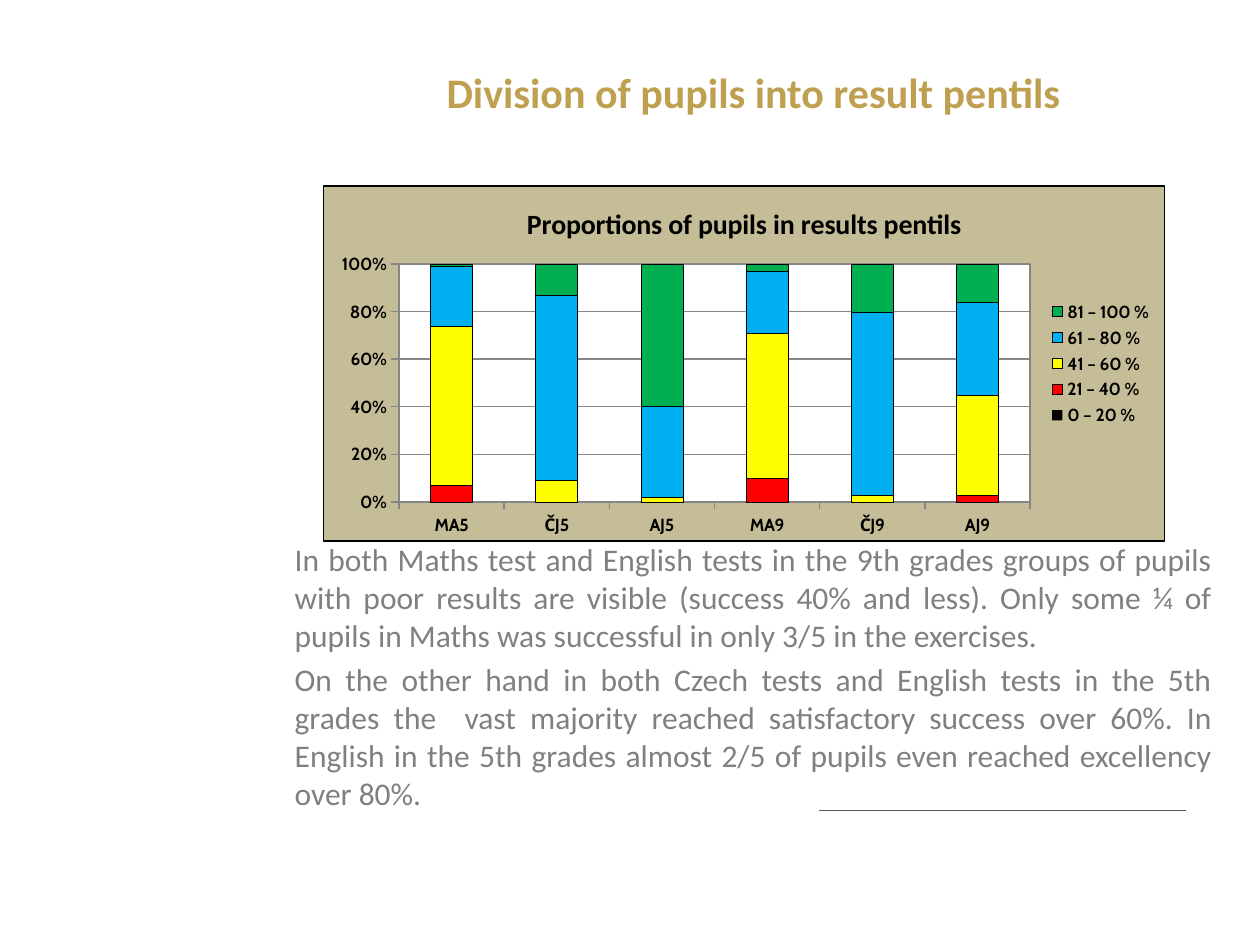
from lxml import etree
from pptx import Presentation
from pptx.chart.data import CategoryChartData
from pptx.dml.color import RGBColor
from pptx.enum.chart import XL_CHART_TYPE, XL_LEGEND_POSITION, XL_TICK_MARK
from pptx.enum.shapes import MSO_CONNECTOR
from pptx.enum.text import MSO_ANCHOR, PP_ALIGN
from pptx.oxml import parse_xml
from pptx.oxml.ns import nsdecls, qn
from pptx.util import Inches, Pt

STACKED = XL_CHART_TYPE.COLUMN_STACKED_100
RIGHT = XL_LEGEND_POSITION.RIGHT
OUTSIDE = XL_TICK_MARK.OUTSIDE
STRAIGHT = MSO_CONNECTOR.STRAIGHT
MIDDLE, TOP = MSO_ANCHOR.MIDDLE, MSO_ANCHOR.TOP
CENTER, JUSTIFY = PP_ALIGN.CENTER, PP_ALIGN.JUSTIFY

COLORS = {
    "gold": "BFA050", "gray": "808080", "rule": "58565B", "grid": "868686",
    "sand": "C4BD97", "white": "FFFFFF", "black": "000000", "red": "FF0000",
    "yellow": "FFFF00", "blue": "00B0F0", "green": "00B050",
}
TESTS = ["MA5", "ČJ5", "AJ5", "MA9", "ČJ9", "AJ9"]
BANDS = [
    ("0 – 20 %", "black", (0, 0, 0, 0, 0, 0)),
    ("21 – 40 %", "red", (7, 0, 0, 10, 0, 3)),
    ("41 – 60 %", "yellow", (67, 9, 2, 61, 3, 42)),
    ("61 – 80 %", "blue", (25, 78, 38, 26, 76, 39)),
    ("81 – 100 %", "green", (1, 13, 59, 3, 20, 16)),
]
NOTES = [
    "In both Maths test and English tests in the 9th grades groups of pupils "
    "with poor results are visible (success 40% and less). Only some ¼ of "
    "pupils in Maths was successful in only 3/5 in the exercises.",
    "On the other hand in both Czech tests and English tests in the 5th grades "
    "the  vast majority reached satisfactory success over 60%. In English in "
    "the 5th grades almost 2/5 of pupils even reached excellency over 80%.",
]


class Deck:
    def __init__(self, slide):
        self.slide = slide
        self.face = "Calibri"
        self.label = "Cabin"

    def color(self, name):
        return RGBColor.from_string(COLORS[name])

    def style(self, font, size, color, bold=False, face=None):
        font.size, font.bold, font.name = Pt(size), bold, face or self.face
        font.color.rgb = self.color(color)

    def stroke(self, line, color, width):
        line.color.rgb = self.color(color)
        line.width = Pt(width)

    def rule(self, left, right, top):
        line = self.slide.shapes.add_connector(
            STRAIGHT, Inches(left), Inches(top), Inches(right), Inches(top))
        self.stroke(line.line, "rule", 0.75)
        etree.SubElement(line._element.spPr, qn("a:effectLst"))

    def text(self, box, lines, size, color, align, anchor, bold=False):
        frame = self.slide.shapes.add_textbox(*map(Inches, box)).text_frame
        frame.word_wrap = True
        frame.vertical_anchor = anchor
        frame.text = "\n".join(lines)
        for i, para in enumerate(frame.paragraphs):
            para.alignment = align
            if i:
                para.space_before = Pt(size * 0.2)
            for run in para.runs:
                self.style(run.font, size, color, bold)

    def area(self, fill, edge):
        return parse_xml(
            f'<c:spPr {nsdecls("c", "a")}>'
            f'<a:solidFill><a:srgbClr val="{COLORS[fill]}"/></a:solidFill>'
            f'<a:ln w="9525"><a:solidFill><a:srgbClr val="{COLORS[edge]}"/>'
            '</a:solidFill></a:ln></c:spPr>')

    def place(self, plot, x, y, w, h):
        for old in plot.findall(qn("c:layout")):
            plot.remove(old)
        spots = {"layoutTarget": "inner", "xMode": "edge", "yMode": "edge",
                 "x": x, "y": y, "w": w, "h": h}
        parts = "".join(f'<c:{k} val="{v}"/>' for k, v in spots.items())
        plot.insert(0, parse_xml(
            f'<c:layout {nsdecls("c")}><c:manualLayout>{parts}'
            '</c:manualLayout></c:layout>'))

    def chart(self, box, title):
        data = CategoryChartData()
        data.categories = TESTS
        for name, _, values in BANDS:
            data.add_series(name, values)
        chart = self.slide.shapes.add_chart(
            STACKED, *map(Inches, box), data).chart
        self.style(chart.font, 10, "black")
        chart.has_title = True
        frame = chart.chart_title.text_frame
        frame.text = title
        self.style(frame.paragraphs[0].runs[0].font, 16, "black", True)
        chart.chart_title.include_in_layout = False
        chart.has_legend = True
        chart.legend.position = RIGHT
        chart.legend.include_in_layout = False
        self.style(chart.legend.font, 10, "black", True, self.label)

        for axis in (chart.category_axis, chart.value_axis):
            axis.major_tick_mark = OUTSIDE
            self.style(axis.tick_labels.font, 10, "black", True, self.label)
            self.stroke(axis.format.line, "grid", 0.75)
        scale = chart.value_axis
        scale.minimum_scale, scale.maximum_scale = 0, 1
        scale.major_unit = 0.2
        scale.has_major_gridlines = True
        self.stroke(scale.major_gridlines.format.line, "grid", 0.75)
        scale.tick_labels.number_format = "0%"
        scale.tick_labels.number_format_is_linked = False

        plot = chart.plots[0]
        plot.gap_width, plot.overlap = 150, 100
        plot.vary_by_categories = False
        for series, (_, color, _) in zip(plot.series, BANDS):
            series.format.fill.solid()
            series.format.fill.fore_color.rgb = self.color(color)
            if color == "black":
                series.format.line.fill.background()
            else:
                self.stroke(series.format.line, "black", 0.25)

        space = chart._chartSpace
        space.chart.addnext(self.area("sand", "black"))
        field = space.chart.plotArea
        self.place(field, 0.09, 0.22, 0.75, 0.67)
        field.append(self.area("white", "grid"))


def main():
    prs = Presentation()
    prs.slide_width, prs.slide_height = Inches(10), Inches(7.5)
    deck = Deck(prs.slides.add_slide(prs.slide_layouts[6]))
    deck.rule(9.41, 6.5, 6.43)
    deck.text((2.24, 0.48, 7.48, 0.5), ["Division of pupils into result pentils"],
              24, "gold", CENTER, MIDDLE, True)
    deck.text((2.24, 4.24, 7.48, 2.74), NOTES, 18, "gray", JUSTIFY, TOP)
    deck.chart((2.56, 1.47, 6.69, 2.83), "Proportions of pupils in results pentils")
    prs.save("out.pptx")


if __name__ == "__main__":
    main()
